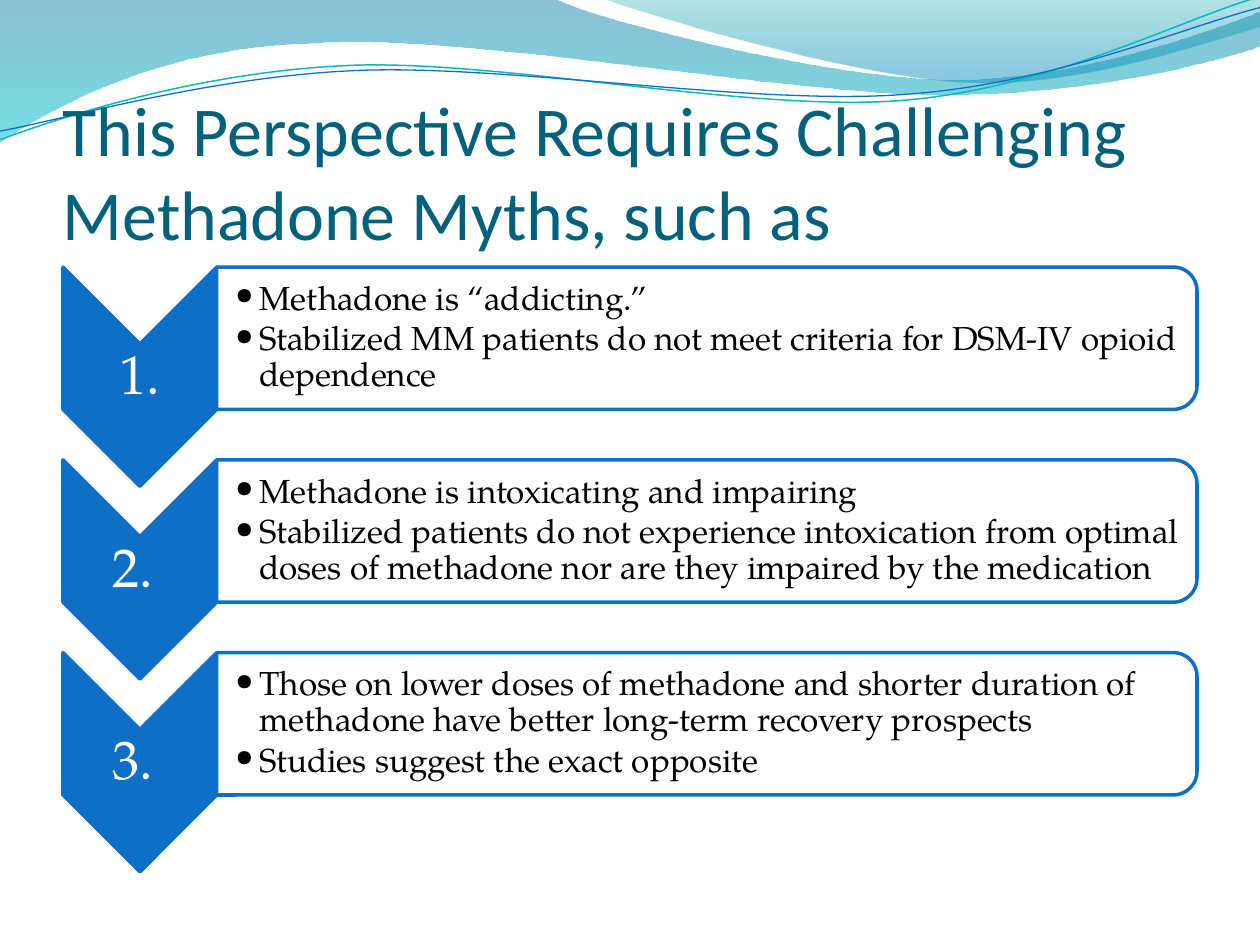
import pptx
import pptx.dml.color
import pptx.enum.shapes
import pptx.enum.text
import pptx.oxml.ns
import pptx.util
from dataclasses import dataclass
from lxml import etree

Inches = pptx.util.Inches
Pt = pptx.util.Pt
Shape = pptx.enum.shapes.MSO_SHAPE
Anchor = pptx.enum.text.MSO_ANCHOR
Align = pptx.enum.text.PP_ALIGN
qn = pptx.oxml.ns.qn


@dataclass(frozen=True)
class Theme:
    blue: str = "0F6FC6"
    teal: str = "0AB8BF"
    title: str = "04617B"
    white: str = "FFFFFF"
    black: str = "000000"
    head: str = "Calibri"
    body: str = "TeX Gyre Pagella"
    big: int = 40
    mid: int = 31
    small: int = 19


THEME = Theme()

BANDS = [
    ((0, 0), [(4.4, -0.01), (4.76, 0.17, 6.64, 0.63, 7.58, 0.63),
              (8.53, 0.63, 9.58, 0.26, 10, 0.09), (10.01, 0.36),
              (9.83, 0.44, 8.7, 0.76, 7.46, 0.75),
              (6.22, 0.75, 3.82, 0.28, 2.57, 0.34),
              (1.29, 0.36, 0.46, 0.83, -0.01, 1.13), (0, 0)],
     [(0, "0074A1", 45), (1, "00C6CF", 55)]),
    ((4.79, -0.01), [(5.09, 0.11, 6.82, 0.62, 7.69, 0.65),
                     (8.56, 0.69, 9.61, 0.32, 10, 0.21), (10, 0), (4.79, -0.01)],
     [(0, "00A1A9", 30), (0.8, "008BBF", 45)]),
]
LINES = [
    ((0, 1.11), [(0.48, 0.93, 1.58, 0.57, 2.77, 0.52),
                 (3.95, 0.47, 5.93, 0.89, 7.13, 0.8),
                 (8.33, 0.71, 9.38, 0.15, 9.98, -0.02)], THEME.teal, 0.85),
    ((0, 1.04), [(0.47, 0.96, 1.64, 0.61, 2.83, 0.56),
                 (4.03, 0.51, 5.97, 0.84, 7.17, 0.75),
                 (8.36, 0.67, 9.41, 0.21, 10, 0.06)], THEME.blue, 0.75),
]
MYTHS = [
    ("1.", ["Methadone is “addicting.”",
            "Stabilized MM patients do not meet criteria for DSM-IV opioid dependence"]),
    ("2. ", ["Methadone is intoxicating and impairing",
             "Stabilized patients do not experience intoxication from optimal doses of "
             "methadone nor are they impaired by the medication"]),
    ("3. ", ["Those on lower doses of methadone and shorter duration of methadone "
             "have better long-term recovery prospects",
             "Studies suggest the exact opposite"]),
]


def tint(code):
    return pptx.dml.color.RGBColor.from_string(code)


def bend(shape, parts):
    nodes = iter(list(shape._element.iter(qn("a:lnTo"))))
    for part in parts:
        first = next(nodes)
        if len(part) == 2:
            continue
        curve = etree.Element(qn("a:cubicBezTo"))
        first.addprevious(curve)
        for node in (first, next(nodes), next(nodes)):
            curve.append(node[0])
            node.getparent().remove(node)


def draw(host, left, top, start, parts, close):
    flat = [start] + [part[i:i + 2] for part in parts for i in range(0, len(part), 2)]
    dots = [(Inches(left + x), Inches(top + y)) for x, y in flat]
    pen = host.shapes.build_freeform(*dots[0])
    pen.add_line_segments(dots[1:], close=close)
    shape = pen.convert_to_shape()
    shape.shadow.inherit = False
    bend(shape, parts)
    return shape


def add_waves(slide, left, top):
    for start, parts, stops in BANDS:
        band = draw(slide, left, top, start, parts, True)
        band.line.fill.background()
        band.fill.gradient()
        band.fill.gradient_angle = 270
        for stop, (place, code, alpha) in zip(band.fill.gradient_stops, stops):
            stop.position = place
            stop.color.rgb = tint(code)
        grad = band._element.spPr.find(qn("a:gradFill"))
        for node, (place, code, alpha) in zip(grad.iter(qn("a:srgbClr")), stops):
            etree.SubElement(node, qn("a:alpha"), val=str(alpha * 1000))
    group = slide.shapes.add_group_shape()
    for start, parts, code, width in LINES:
        line = draw(group, left, top, start, parts, False)
        line.fill.background()
        line.line.color.rgb = tint(code)
        line.line.width = Pt(width)


def add_box(host, left, top, width, height, insets, anchor):
    box = host.shapes.add_textbox(*map(Inches, (left, top, width, height)))
    frame = box.text_frame
    frame.word_wrap = True
    frame.vertical_anchor = anchor
    (frame.margin_left, frame.margin_top,
     frame.margin_right, frame.margin_bottom) = map(Inches, insets)
    return frame


def add_run(para, text, font, size, code):
    run = para.add_run()
    run.text = text
    run.font.name = font
    run.font.size = Pt(size)
    run.font.color.rgb = tint(code)


def add_title(slide, left, top, width, height):
    frame = add_box(slide, left, top, width, height, (0, 0.05, 0, 0), Anchor.BOTTOM)
    add_run(frame.paragraphs[0],
            "This Perspective Requires Challenging Methadone Myths, such as",
            THEME.head, THEME.big, THEME.title)


def add_turned(host, kind, left, top, width, height, fill):
    x = left + (width - height) / 2
    y = top + (height - width) / 2
    shape = host.shapes.add_shape(kind, *map(Inches, (x, y, height, width)))
    shape.rotation = 90
    shape.shadow.inherit = False
    shape.fill.solid()
    shape.fill.fore_color.rgb = tint(fill)
    shape.line.color.rgb = tint(THEME.blue)
    shape.line.width = Pt(2)


def add_bullet(para):
    para.level = 1
    props = para._p.get_or_add_pPr()
    props.set("marL", str(Inches(0.19)))
    props.set("indent", str(Inches(-0.19)))
    etree.SubElement(props, qn("a:buFont"), typeface=THEME.body)
    etree.SubElement(props, qn("a:buChar"), char="•")


def add_myth(host, left, top, width, height, mark, points):
    tip = 1.22
    add_turned(host, Shape.CHEVRON, left, top, tip, 1.74, THEME.blue)
    frame = add_box(host, left, top + 0.61, tip, 0.52, (0.02,) * 4, Anchor.MIDDLE)
    para = frame.paragraphs[0]
    para.alignment = Align.CENTER
    para.line_spacing = 0.9
    add_run(para, mark, THEME.body, THEME.mid, THEME.white)

    add_turned(host, Shape.ROUND_2_SAME_RECTANGLE, left + tip, top,
               width - tip, height, THEME.white)
    frame = add_box(host, left + tip, top + 0.05, width - tip - 0.05, height - 0.11,
                    (0.15, 0.01, 0.01, 0.01), Anchor.MIDDLE)
    for index, point in enumerate(points):
        para = frame.add_paragraph() if index else frame.paragraphs[0]
        para.line_spacing = 0.9
        para.space_after = Pt(2.5)
        add_bullet(para)
        add_run(para, point, THEME.body, THEME.small, THEME.black)


def add_list(slide, left, top, width, pitch):
    group = slide.shapes.add_group_shape()
    for row, (mark, points) in enumerate(MYTHS):
        add_myth(group, left, top + row * pitch, width, 1.13, mark, points)


def main():
    deck = pptx.Presentation()
    deck.slide_width = Inches(10)
    deck.slide_height = Inches(7.5)
    slide = deck.slides.add_slide(deck.slide_layouts[6])
    add_waves(slide, 0, 0)
    add_title(slide, 0.5, 0.77, 9, 1.25)
    add_list(slide, 0.5, 2.12, 9, 1.53)
    deck.save("out.pptx")


if __name__ == "__main__":
    main()
